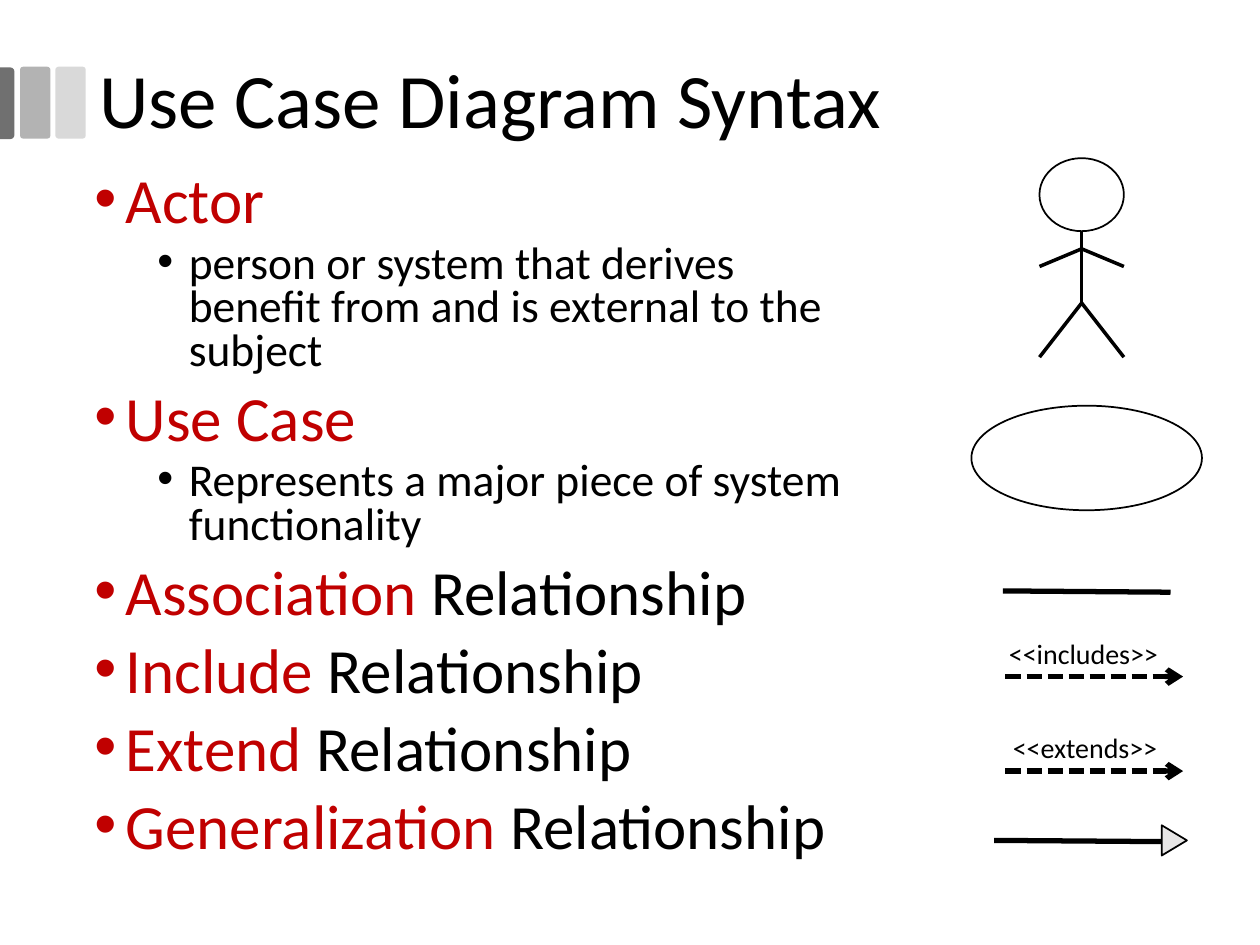
"""Build the slide that sums up use case diagram syntax."""
from lxml import etree
from pptx import Presentation
from pptx.dml.color import RGBColor
from pptx.enum.dml import MSO_LINE
from pptx.enum.shapes import MSO_CONNECTOR, MSO_SHAPE
from pptx.enum.text import MSO_ANCHOR, MSO_AUTO_SIZE
from pptx.oxml.ns import qn
from pptx.util import Inches, Pt

STRAIGHT = MSO_CONNECTOR.STRAIGHT
OVAL = MSO_SHAPE.OVAL
ROUNDED = MSO_SHAPE.ROUNDED_RECTANGLE
ROUNDED_TOP = MSO_SHAPE.ROUND_2_SAME_RECTANGLE
TRIANGLE = MSO_SHAPE.ISOSCELES_TRIANGLE
DASHED = MSO_LINE.SQUARE_DOT
TOP, MIDDLE = MSO_ANCHOR.TOP, MSO_ANCHOR.MIDDLE
GROW = MSO_AUTO_SIZE.SHAPE_TO_FIT_TEXT
FIXED = MSO_AUTO_SIZE.NONE

COLORS = {
    "ink": "000000",
    "term": "C00000",
    "tip": "E7E6E6",
    "dark": "707070",
    "mid": "B3B3B3",
    "light": "D9D9D9",
}
LEVELS = [
    {"size": 36, "margin": 0.25, "before": 10},
    {"size": 26, "margin": 0.75, "before": 5},
]
OUTLINE = [
    (0, "Actor", ""),
    (1, "", "person or system that derives benefit from and is external to the subject"),
    (0, "Use Case", ""),
    (1, "", "Represents a major piece of system functionality"),
    (0, "Association", " Relationship"),
    (0, "Include", " Relationship"),
    (0, "Extend", " Relationship"),
    (0, "Generalization", " Relationship"),
]


class Sketch:
    """Draws styled elements on one page, placed on a grid of 100 columns by 75 rows."""

    def __init__(self, deck):
        self.page = deck.slides.add_slide(deck.slide_layouts[6])
        self.column = deck.slide_width / 100
        self.row = deck.slide_height / 75
        self.font = "Calibri"

    def place(self, *cells):
        units = (self.column, self.row) * 2
        return [round(cell * unit) for cell, unit in zip(cells, units)]

    def color(self, name):
        return RGBColor.from_string(COLORS[name])

    def shape(self, kind, cells, fill=None, line=None, turn=0, adjust=()):
        shape = self.page.shapes.add_shape(kind, *self.place(*cells))
        shape.shadow.inherit = False
        shape.rotation = turn
        for index, value in enumerate(adjust):
            shape.adjustments[index] = value
        if fill:
            shape.fill.solid()
            shape.fill.fore_color.rgb = self.color(fill)
        else:
            shape.fill.background()
        if line:
            shape.line.color.rgb = self.color(line)
            shape.line.width = Pt(1)
        else:
            shape.line.fill.background()

    def line(self, start, end, width, dash=None, arrow=False):
        line = self.page.shapes.add_connector(STRAIGHT, *self.place(*start, *end))
        line.line.color.rgb = self.color("ink")
        line.line.width = Pt(width)
        if dash:
            line.line.dash_style = dash
        if arrow:
            outline = line.line.fill._xPr
            etree.SubElement(outline, qn("a:tailEnd"), type="arrow")
        etree.SubElement(line._element.spPr, qn("a:effectLst"))

    def frame(self, cells, **format_values):
        box = self.page.shapes.add_textbox(*self.place(*cells))
        for name, value in format_values.items():
            setattr(box.text_frame, name, value)
        return box.text_frame

    def span(self, para, text, size, color):
        span = para.add_run()
        span.text = text
        for name, value in {"name": self.font, "size": Pt(size)}.items():
            setattr(span.font, name, value)
        span.font.color.rgb = self.color(color)

    def text(self, cells, text, size, spacing=None, **format_values):
        para = self.frame(cells, **format_values).paragraphs[0]
        para.line_spacing = spacing
        self.span(para, text, size, "ink")

    def bullets(self, cells, items):
        frame = self.frame(cells, word_wrap=True, auto_size=FIXED, vertical_anchor=TOP)
        for index, (level, term, rest) in enumerate(items):
            style = LEVELS[level]
            para = frame.add_paragraph() if index else frame.paragraphs[0]
            format_values = {
                "level": level,
                "line_spacing": 0.8,
                "space_before": Pt(style["before"] if index else 0),
            }
            for name, value in format_values.items():
                setattr(para, name, value)
            properties = para._p.get_or_add_pPr()
            properties.set("marL", str(Inches(style["margin"])))
            properties.set("indent", str(-Inches(0.25)))
            etree.SubElement(properties, qn("a:buFont"), typeface="Arial")
            etree.SubElement(properties, qn("a:buChar"), char="•")
            for part, color in ((term, "term"), (rest, "ink")):
                if part:
                    self.span(para, part, style["size"], color)

    def actor(self, center, top):
        reach = 3.35
        neck, shoulder, hip = top + 5.75, top + 7.2, top + 11.5
        self.shape(OVAL, (center - reach, top, 2 * reach, 5.8), line="ink")
        self.line((center, neck), (center, hip), 2)
        for joint, drop in ((hip, 4.3), (shoulder, 1.4)):
            for side in (-reach, reach):
                self.line((center, joint), (center + side, joint + drop), 2)

    def dependency(self, label, left, top, width):
        self.line((79.8, top + 3.7), (93.9, top + 3.7), 3, DASHED, arrow=True)
        self.text((left, top, width, 3.7), label, 16, word_wrap=False, auto_size=GROW)


def main():
    deck = Presentation()
    deck.slide_width, deck.slide_height = Inches(10), Inches(7.5)
    sketch = Sketch(deck)

    for left, color in ((4.4, "light"), (1.6, "mid")):
        sketch.shape(ROUNDED, (left, 5.3, 2.4, 5.7), color, adjust=[0.1])
    sketch.shape(ROUNDED_TOP, (-2.3, 7.6, 5.7, 1.2), "dark", turn=90, adjust=[0.29, 0])
    sketch.text((6.9, 1.7, 86.2, 13.1), "Use Case Diagram Syntax", 44, 0.9,
                word_wrap=True, auto_size=FIXED, vertical_anchor=MIDDLE)
    sketch.bullets((6.5, 13.4, 63.5, 58.6), OUTLINE)

    sketch.actor(85.85, 12.55)
    sketch.shape(OVAL, (77.1, 32.2, 18.3, 8.3), line="ink")
    sketch.line((79.6, 46.9), (92.9, 47), 3)
    sketch.dependency("<<includes>>", 79.1, 50, 14)
    sketch.dependency("<<extends>>", 79.4, 57.5, 13.6)
    sketch.line((78.9, 66.7), (92.9, 66.8), 3)
    sketch.shape(TRIANGLE, (92, 65.7, 2.4, 2), "tip", "ink", turn=90)

    deck.save("out.pptx")


if __name__ == "__main__":
    main()
